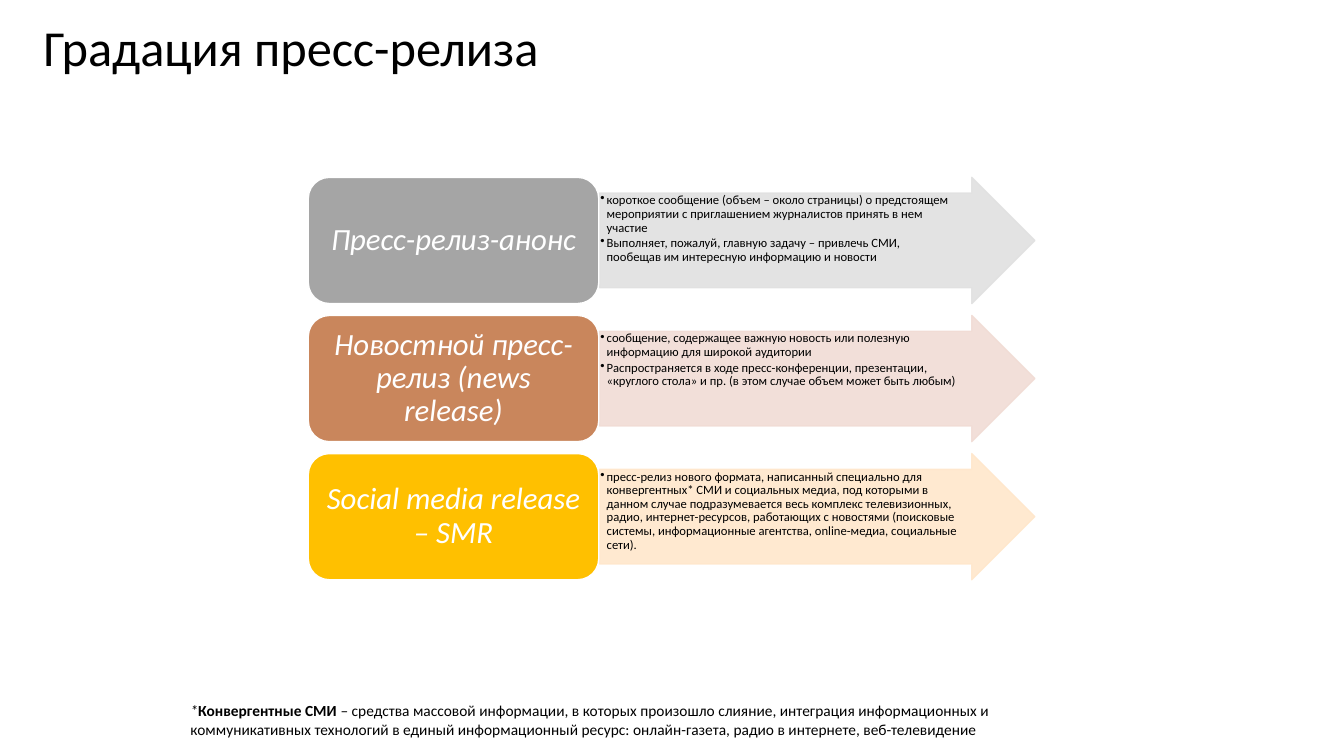
from lxml import etree
from pptx import Presentation
from pptx.dml.color import RGBColor
from pptx.enum.shapes import MSO_SHAPE
from pptx.enum.text import MSO_ANCHOR, MSO_AUTO_SIZE, PP_ALIGN
from pptx.oxml.ns import qn
from pptx.util import Cm, Pt

ARROW, BOX = MSO_SHAPE.RIGHT_ARROW, MSO_SHAPE.ROUNDED_RECTANGLE
TOP, MIDDLE = MSO_ANCHOR.TOP, MSO_ANCHOR.MIDDLE
LEFT, CENTER = PP_ALIGN.LEFT, PP_ALIGN.CENTER

ROW_TOP, ROW_STEP, ROW_HEIGHT = 4.47, 3.48, 3.18

ROWS = [
    ("Пресс-релиз-анонс", "A5A5A5", "E1E1E1", [
        "короткое сообщение (объем – около страницы) о предстоящем мероприятии "
        "с приглашением журналистов принять в нем участие",
        "Выполняет, пожалуй, главную задачу – привлечь СМИ, пообещав им "
        "интересную информацию и новости",
    ]),
    ("Новостной пресс-релиз (news release)", "C9865C", "F1DCD5", [
        "сообщение, содержащее важную новость или полезную информацию "
        "для широкой аудитории",
        "Распространяется в ходе пресс-конференции, презентации, «круглого "
        "стола» и пр. (в этом случае объем может быть любым)",
    ]),
    ("Social media release – SMR", "FFC000", "FFE7CB", [
        "пресс-релиз нового формата, написанный специально для конвергентных* "
        "СМИ и социальных медиа, под которыми в данном случае подразумевается "
        "весь комплекс телевизионных, радио, интернет-ресурсов, работающих с "
        "новостями (поисковые системы, информационные агентства, online-медиа, "
        "социальные сети).",
    ]),
]

FOOTNOTE = [
    ("*", {"italic": True}),
    ("Конвергентные СМИ ", {"bold": True}),
    ("– средства массовой информации, в которых произошло слияние, интеграция "
     "информационных и коммуникативных технологий в единый информационный "
     "ресурс: онлайн-газета, радио в интернете, веб-телевидение", {}),
]


def add_run(p, text, size, color, **formats):
    r = p.add_run()
    r.text = text
    r.font.color.rgb = RGBColor.from_string(color)
    for name, value in {"name": "Calibri", "size": Pt(size), **formats}.items():
        setattr(r.font, name, value)


def add_block(kind, left, top, width, fill, line, margins, anchor):
    """Add a row shape; margins are left, top, right, bottom in cm."""
    s = slide.shapes.add_shape(kind, Cm(left), Cm(top), Cm(width), Cm(ROW_HEIGHT))
    s.shadow.inherit = False
    s.fill.solid()
    s.fill.fore_color.rgb = RGBColor.from_string(fill)
    s.line.color.rgb = RGBColor.from_string(line)
    s.line.width = Pt(1)
    tf = s.text_frame
    tf.word_wrap = True
    tf.vertical_anchor = anchor
    for side, margin in zip(("left", "top", "right", "bottom"), margins):
        setattr(tf, f"margin_{side}", Cm(margin))
    return s


prs = Presentation()
prs.slide_width, prs.slide_height = Cm(33.87), Cm(19.05)
slide = prs.slides.add_slide(prs.slide_layouts[5])

title = slide.shapes.title
title.left, title.top, title.width, title.height = Cm(0.84), Cm(-0.58), Cm(29.21), Cm(3.68)
tf = title.text_frame
tf.auto_size = MSO_AUTO_SIZE.NONE
tf.vertical_anchor = MIDDLE
p = tf.paragraphs[0]
p.alignment = LEFT
p.line_spacing = 0.9
add_run(p, "Градация пресс-релиза", 36, "000000")

for i, (name, box_color, arrow_color, points) in enumerate(ROWS):
    top = ROW_TOP + i * ROW_STEP

    arrow = add_block(ARROW, 15.11, top, 10.97, arrow_color, arrow_color,
                      (0.02, 0.02, 0.78, 0.02), TOP)
    arrow.adjustments[0], arrow.adjustments[1] = 0.75, 0.5
    for color in arrow._element.spPr.iter(qn("a:srgbClr")):
        etree.SubElement(color, qn("a:alpha"), val="90000")
    tf = arrow.text_frame
    for n, point in enumerate(points):
        p = tf.add_paragraph() if n else tf.paragraphs[0]
        pPr = p._p.get_or_add_pPr()
        pPr.set("marL", str(Cm(0.16)))
        pPr.set("indent", str(Cm(-0.16)))
        etree.SubElement(pPr, qn("a:buChar"), char="•")
        p.alignment = LEFT
        p.line_spacing = 0.9
        p.space_after = Pt(1.35)
        add_run(p, point, 9, "000000")

    box = add_block(BOX, 7.77, top, 7.32, box_color, "FFFFFF",
                    (0.23, 0.12, 0.23, 0.12), MIDDLE)
    p = box.text_frame.paragraphs[0]
    p.alignment = CENTER
    p.line_spacing = 0.9
    add_run(p, name, 22, "FFFFFF", italic=True)

footnote = slide.shapes.add_textbox(Cm(4.55), Cm(17.55), Cm(21.08), Cm(1.19))
tf = footnote.text_frame
tf.word_wrap = True
for text, formats in FOOTNOTE:
    add_run(tf.paragraphs[0], text, 11, "000000", **formats)

prs.save("out.pptx")
